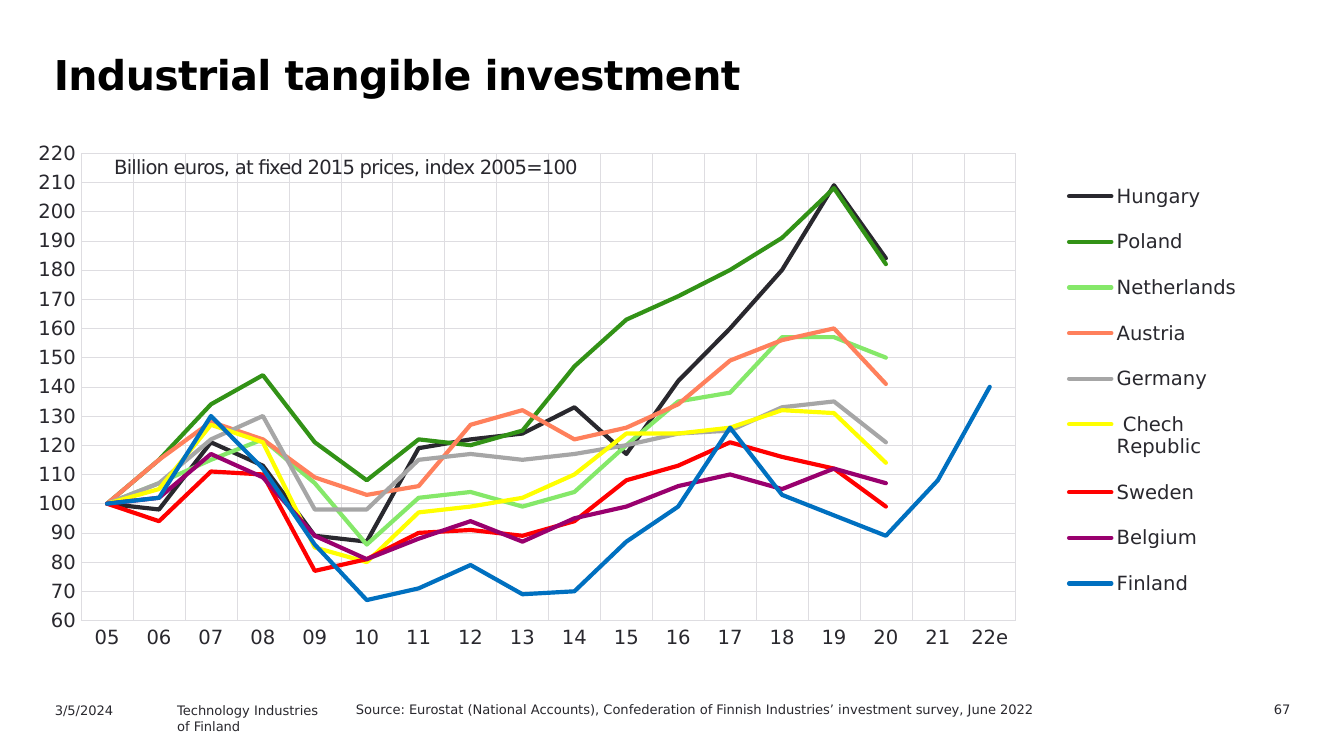
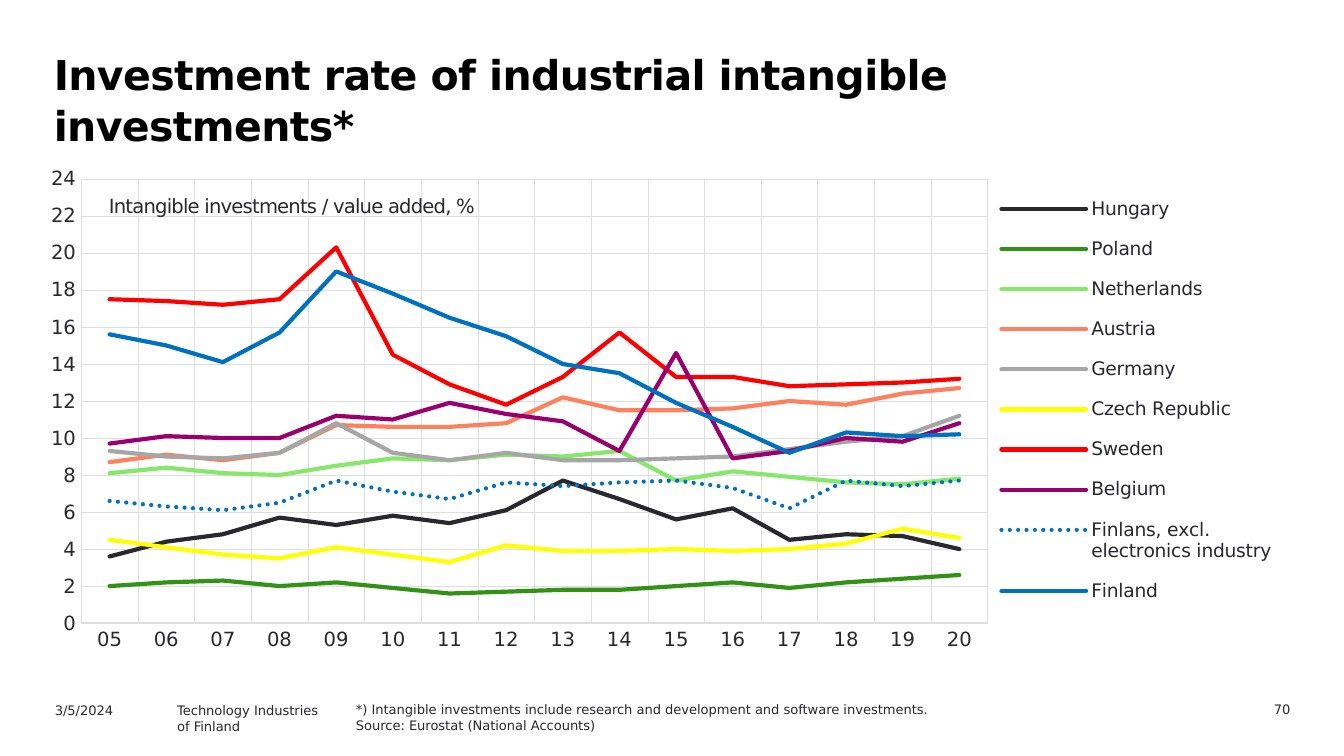
from lxml import etree
from pptx import Presentation
from pptx.chart.data import CategoryChartData
from pptx.dml.color import RGBColor
from pptx.enum.chart import XL_CHART_TYPE as ChartType, XL_LEGEND_POSITION as LegendPos
from pptx.enum.chart import XL_TICK_MARK as TickMark
from pptx.enum.dml import MSO_LINE
from pptx.enum.text import MSO_ANCHOR, MSO_AUTO_SIZE, PP_ALIGN
from pptx.oxml.ns import qn
from pptx.util import Inches, Pt

FONT = "DejaVu Sans"
INK = "29282E"
BLACK = "000000"
GRID = "DEDDE1"
AXIS_SIZE = 10.5
FOOTER_SIZE = 7
FINLAND_BLUE = "0070C0"
DOTTED = "Finlans, excl. electronics industry"
COLORS = {
    "Hungary": INK,
    "Poland": "329216",
    "Netherlands": "85E869",
    "Austria": "FF805C",
    "Germany": "A6A6A6",
    " Chech Republic": "FFFF00",
    "Czech Republic": "FFFF00",
    "Sweden": "FF0000",
    "Belgium": "99006E",
    DOTTED: FINLAND_BLUE,
    "Finland": FINLAND_BLUE,
}

YEARS = [f"{year:02}" for year in range(5, 21)]

TANGIBLE = {
    "Hungary": [100, 98, 121, 113, 89, 87, 119, 122, 124, 133, 117, 142, 160, 180, 209, 184],
    "Poland": [100, 115, 134, 144, 121, 108, 122, 120, 125, 147, 163, 171, 180, 191, 208, 182],
    "Netherlands": [100, 107, 115, 122, 107, 86, 102, 104, 99, 104, 120, 135, 138, 157, 157, 150],
    "Austria": [100, 115, 128, 122, 109, 103, 106, 127, 132, 122, 126, 134, 149, 156, 160, 141],
    "Germany": [100, 107, 122, 130, 98, 98, 115, 117, 115, 117, 120, 124, 125, 133, 135, 121],
    " Chech Republic": [100, 105, 127, 121, 85, 80, 97, 99, 102, 110, 124, 124, 126, 132, 131, 114],
    "Sweden": [100, 94, 111, 110, 77, 81, 90, 91, 89, 94, 108, 113, 121, 116, 112, 99],
    "Belgium": [100, 102, 117, 109, 89, 81, 88, 94, 87, 95, 99, 106, 110, 105, 112, 107],
    "Finland": [100, 102, 130, 112, 86, 67, 71, 79, 69, 70, 87, 99, 126, 103, 96, 89, 108, 140],
}

INTANGIBLE = {
    "Hungary": [3.6, 4.4, 4.8, 5.7, 5.3, 5.8, 5.4, 6.1, 7.7, 6.7, 5.6, 6.2, 4.5, 4.8, 4.7, 4],
    "Poland": [2, 2.2, 2.3, 2, 2.2, 1.9, 1.6, 1.7, 1.8, 1.8, 2, 2.2, 1.9, 2.2, 2.4, 2.6],
    "Netherlands": [8.1, 8.4, 8.1, 8, 8.5, 8.9, 8.8, 9.1, 9, 9.3, 7.7, 8.2, 7.9, 7.6, 7.5, 7.8],
    "Austria": [8.7, 9.1, 8.8, 9.2, 10.7, 10.6, 10.6, 10.8, 12.2, 11.5, 11.5, 11.6, 12, 11.8,
                12.4, 12.7],
    "Germany": [9.3, 9, 8.9, 9.2, 10.8, 9.2, 8.8, 9.2, 8.8, 8.8, 8.9, 9, 9.4, 9.8, 10.1, 11.2],
    "Czech Republic": [4.5, 4.1, 3.7, 3.5, 4.1, 3.7, 3.3, 4.2, 3.9, 3.9, 4, 3.9, 4, 4.3, 5.1, 4.6],
    "Sweden": [17.5, 17.4, 17.2, 17.5, 20.3, 14.5, 12.9, 11.8, 13.3, 15.7, 13.3, 13.3, 12.8, 12.9,
               13, 13.2],
    "Belgium": [9.7, 10.1, 10, 10, 11.2, 11, 11.9, 11.3, 10.9, 9.3, 14.6, 8.9, 9.3, 10, 9.8, 10.8],
    DOTTED: [6.6, 6.3, 6.1, 6.5, 7.7, 7.1, 6.7, 7.6, 7.4, 7.6, 7.7, 7.3, 6.2, 7.7, 7.4, 7.7],
    "Finland": [15.6, 15, 14.1, 15.7, 19, 17.8, 16.5, 15.5, 14, 13.5, 11.9, 10.6, 9.2, 10.3,
                10.1, 10.2],
}


def rgb(value):
    return RGBColor.from_string(value)


def style_font(font, size, color=INK, bold=False):
    font.name = FONT
    font.size = Pt(size)
    font.bold = bold
    font.color.rgb = rgb(color)


def style_line(line, color, width):
    line.color.rgb = rgb(color)
    line.width = Pt(width)


def place(shape, left, top, width, height):
    shape.left, shape.top = Inches(left), Inches(top)
    shape.width, shape.height = Inches(width), Inches(height)


def add_run(para, text, size, color=INK, bold=False, spacing=0):
    """Add a run; spacing is the letter spacing in points."""
    span = para.add_run()
    span.text = text
    style_font(span.font, size, color, bold)
    if spacing:
        span.font._element.set("spc", str(round(spacing * 100)))


def add_title(page, text, width, height):
    title = page.shapes.title
    place(title, 0.28, 0.31, width, height)
    frame = title.text_frame
    frame.word_wrap = True
    frame.auto_size = MSO_AUTO_SIZE.NONE
    frame.vertical_anchor = MSO_ANCHOR.TOP
    para = frame.paragraphs[0]
    para.alignment = PP_ALIGN.LEFT
    para.line_spacing = Pt(27)
    para._p.get_or_add_pPr().set("marL", str(Inches(0.02)))
    add_run(para, text, 22, BLACK, bold=True, spacing=-0.3)


def add_text(page, lines, area, size=FOOTER_SIZE, align=PP_ALIGN.LEFT, inset=None, spacing=0):
    box = page.shapes.add_textbox(*map(Inches, area))
    frame = box.text_frame
    frame.word_wrap = True
    if inset is not None:
        frame.margin_left = frame.margin_right = Inches(inset)
        frame.margin_top = frame.margin_bottom = Inches(inset)
    for index, line in enumerate(lines):
        para = frame.add_paragraph() if index else frame.paragraphs[0]
        para.alignment = align
        add_run(para, line, size, spacing=spacing)


def add_footer(page, number, source):
    add_text(page, [number], (8.76, 5.17, 0.94, 0.18), align=PP_ALIGN.RIGHT)
    add_text(page, source, (2.55, 5.17, 6.46, 0.18))
    add_text(page, ["3/5/2024"], (0.31, 5.18, 1, 0.18))
    add_text(page, ["Technology Industries", "of Finland"], (1.22, 5.18, 1.8, 0.18))


def make_layout(area, inner=False):
    """Build a manual chart layout from fractions of the chart's size."""
    layout = etree.Element(qn("c:layout"))
    manual = etree.SubElement(layout, qn("c:manualLayout"))
    settings = [("layoutTarget", "inner")] if inner else []
    settings += [("xMode", "edge"), ("yMode", "edge"), *zip("xywh", map(str, area))]
    for name, value in settings:
        etree.SubElement(manual, qn(f"c:{name}")).set("val", value)
    return layout


def position_plot(chart, area):
    plot_area = chart._chartSpace.chart.plotArea
    for layout in plot_area.findall(qn("c:layout")):
        plot_area.remove(layout)
    plot_area.insert(0, make_layout(area, inner=True))


def add_legend(chart, position, size, area):
    chart.has_legend = True
    legend = chart.legend
    legend.position = position
    legend.include_in_layout = False
    style_font(legend.font, size)
    element = legend._element
    for layout in element.findall(qn("c:layout")):
        element.remove(layout)
    element.find(qn("c:legendPos")).addnext(make_layout(area))


def style_axis(axis):
    axis.major_tick_mark = axis.minor_tick_mark = TickMark.NONE
    axis.has_major_gridlines = True
    style_line(axis.major_gridlines.format.line, GRID, 0.25)
    style_font(axis.tick_labels.font, AXIS_SIZE)


def add_line_chart(page, area, years, values, scale, plot):
    data = CategoryChartData(number_format="General")
    data.categories = years
    for name, numbers in values.items():
        data.add_series(name, numbers + [None] * (len(years) - len(numbers)))
    chart = page.shapes.add_chart(ChartType.LINE, *map(Inches, area), data).chart
    chart.has_title = False
    style_font(chart.font, 10)

    style_axis(chart.category_axis)
    style_line(chart.category_axis.format.line, GRID, 0.75)
    value_axis = chart.value_axis
    style_axis(value_axis)
    value_axis.format.line.fill.background()
    value_axis.minimum_scale, value_axis.maximum_scale, value_axis.major_unit = scale
    value_axis.tick_labels.number_format = "#,##0"
    value_axis.tick_labels.number_format_is_linked = False

    chart.plots[0].vary_by_categories = False
    for series in chart.plots[0].series:
        series.smooth = False
        style_line(series.format.line, COLORS[series.name], 2.25)
        if series.name == DOTTED:
            series.format.line.dash_style = MSO_LINE.ROUND_DOT
    for line in chart._chartSpace.xpath(".//c:ser/c:spPr/a:ln"):
        line.set("cap", "rnd")
    position_plot(chart, plot)
    return chart


def add_unit(page, text, area):
    add_text(page, [text], area, size=AXIS_SIZE, inset=0.04, spacing=-0.4)


def add_tangible_page(deck):
    page = deck.slides.add_slide(deck.slide_layouts[5])
    add_title(page, "Industrial tangible investment", 8.74, 0.52)
    chart = add_line_chart(page, (0.28, 0.97, 9.26, 4.04), YEARS + ["21", "22e"], TANGIBLE,
                           (60, 220, 10), (0.035, 0.042, 0.751, 0.861))
    add_legend(chart, LegendPos.RIGHT, 10.5, (0.816, 0.058, 0.16, 0.84))
    add_unit(page, "Billion euros, at fixed 2015 prices, index 2005=100", (0.81, 1.11, 4.02, 0.26))
    add_footer(page, "67", ["Source: Eurostat (National Accounts), Confederation of Finnish "
                            "Industries’ investment survey, June 2022"])


def add_intangible_page(deck):
    page = deck.slides.add_slide(deck.slide_layouts[5])
    add_title(page, "Investment rate of industrial intangible investments*", 8.9, 0.85)
    chart = add_line_chart(page, (0.28, 1.17, 9.29, 3.84), YEARS, INTANGIBLE,
                           (0, 24, 2), (0.035, 0.042, 0.726, 0.861))
    add_legend(chart, LegendPos.CORNER, 10, (0.765, 0.043, 0.23, 0.855))
    add_unit(page, "Intangible investments / value added, %", (0.77, 1.4, 3.31, 0.26))
    add_footer(page, "70", [
        "*) Intangible investments include research and development and software investments.",
        "Source: Eurostat (National Accounts)",
    ])


def main():
    deck = Presentation()
    deck.slide_width = Inches(10)
    deck.slide_height = deck.slide_width * 9 // 16
    add_tangible_page(deck)
    add_intangible_page(deck)
    deck.save("out.pptx")


if __name__ == "__main__":
    main()
